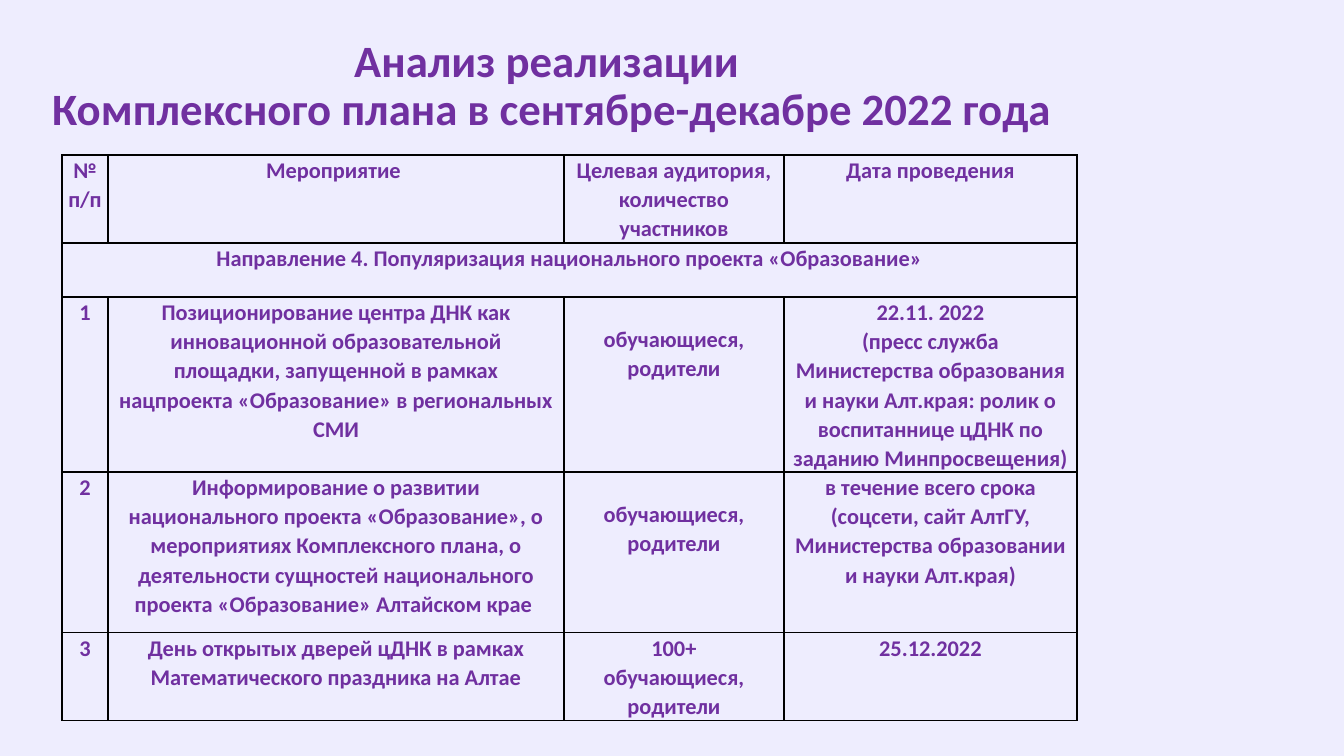
from dataclasses import dataclass

from lxml import etree
from pptx import Presentation
from pptx import util as u
from pptx.dml.color import RGBColor
from pptx.enum import text
from pptx.oxml.ns import qn

PX_PER_INCH = 100.8
PURPLE = "7030A0"
COLUMNS = [46, 456, 220, 293]


@dataclass
class Entry:
    """One cell: its text, side margin and top margin in px."""
    words: str
    side: int = 6
    top: int = 0


@dataclass
class Row:
    """One table row; a single entry spans all columns."""
    height: int
    entries: list[Entry]


ROWS = [
    Row(88, [
        Entry("№ п/п"),
        Entry("Мероприятие "),
        Entry("Целевая аудитория, количество участников"),
        Entry("Дата проведения"),
    ]),
    Row(54, [Entry("Направление 4. Популяризация национального проекта «Образование»")]),
    Row(175, [
        Entry("1"),
        Entry("Позиционирование центра ДНК как инновационной образовательной площадки, "
              "запущенной в рамках нацпроекта «Образование» в региональных СМИ", 7),
        Entry("обучающиеся, родители", top=27),
        Entry("22.11. 2022\n(пресс служба Министерства образования и науки Алт.края: "
              "ролик о воспитаннице цДНК по заданию Минпросвещения)", 7),
    ]),
    Row(161, [
        Entry("2"),
        Entry("Информирование о развитии национального проекта «Образование», "
              "о мероприятиях Комплексного плана, о деятельности сущностей "
              "национального проекта «Образование» Алтайском крае ", 7),
        Entry("обучающиеся, родители", top=27),
        Entry("в течение всего срока\n(соцсети, сайт АлтГУ, "
              "Министерства образовании и науки Алт.края)", 7),
    ]),
    Row(88, [
        Entry("3"),
        Entry("День открытых дверей цДНК в рамках Математического праздника на Алтае", 7),
        Entry("100+\nобучающиеся, родители"),
        Entry("25.12.2022", 7),
    ]),
]


def px(n: int) -> int:
    """Turn px into EMU."""
    return u.Inches(n / PX_PER_INCH)


def color(value: str) -> RGBColor:
    """Turn a hex string into a colour."""
    return RGBColor.from_string(value)


def write(tf, words: str, *, size: int, spacing: float, fill: str = PURPLE) -> None:
    """Write centred bold paragraphs, one for each line of words."""
    for i, line in enumerate(words.split("\n")):
        p = tf.add_paragraph() if i else tf.paragraphs[0]
        p.text = line
        p.alignment = text.PP_ALIGN.CENTER
        p.line_spacing = spacing
        for r in p.runs:
            r.font.name = "Calibri"
            r.font.size = u.Pt(size)
            r.font.bold = True
            r.font.color.rgb = color(fill)


def add_borders(cell, line: str = "000000") -> None:
    """Outline a cell on all sides with a one-point line."""
    tc_pr = cell._tc.get_or_add_tcPr()
    for side in ("a:lnL", "a:lnR", "a:lnT", "a:lnB"):
        ln = etree.SubElement(tc_pr, qn(side), w=str(u.Pt(1)))
        solid = etree.SubElement(ln, qn("a:solidFill"))
        etree.SubElement(solid, qn("a:srgbClr"), val=line)


def add_title(slide) -> None:
    """Add the two-line heading."""
    tf = slide.shapes.add_textbox(px(40), px(14), px(1024), px(146)).text_frame
    tf.word_wrap = True
    tf.vertical_anchor = text.MSO_ANCHOR.MIDDLE
    write(tf, "Анализ реализации \vКомплексного плана в сентябре-декабре 2022 года",
          size=32, spacing=0.9)


def add_plan(slide, rows: list[Row]) -> None:
    """Add the table of events."""
    height = sum(row.height for row in rows)
    table = slide.shapes.add_table(len(rows), len(COLUMNS), px(62), px(155),
                                   px(sum(COLUMNS)), px(height)).table
    table.first_row = table.horz_banding = False
    for column, width in zip(table.columns, COLUMNS):
        column.width = px(width)
    for i, row in enumerate(rows):
        table.rows[i].height = px(row.height)
        if len(row.entries) == 1:
            table.cell(i, 0).merge(table.cell(i, len(COLUMNS) - 1))
        for cell in table.rows[i].cells:
            add_borders(cell)
            cell.fill.background()
        for cell, entry in zip(table.rows[i].cells, row.entries):
            cell.margin_left = cell.margin_right = px(entry.side)
            cell.margin_top, cell.margin_bottom = px(entry.top), 0
            write(cell.text_frame, entry.words, size=16, spacing=1.07)


def main() -> None:
    """Build and save the slide."""
    prs = Presentation()
    prs.slide_width, prs.slide_height = px(1344), px(756)
    s = prs.slides.add_slide(prs.slide_layouts[6])
    s.background.fill.solid()
    s.background.fill.fore_color.rgb = color("EEEDFE")
    add_title(s)
    add_plan(s, ROWS)
    prs.save("out.pptx")


if __name__ == "__main__":
    main()
